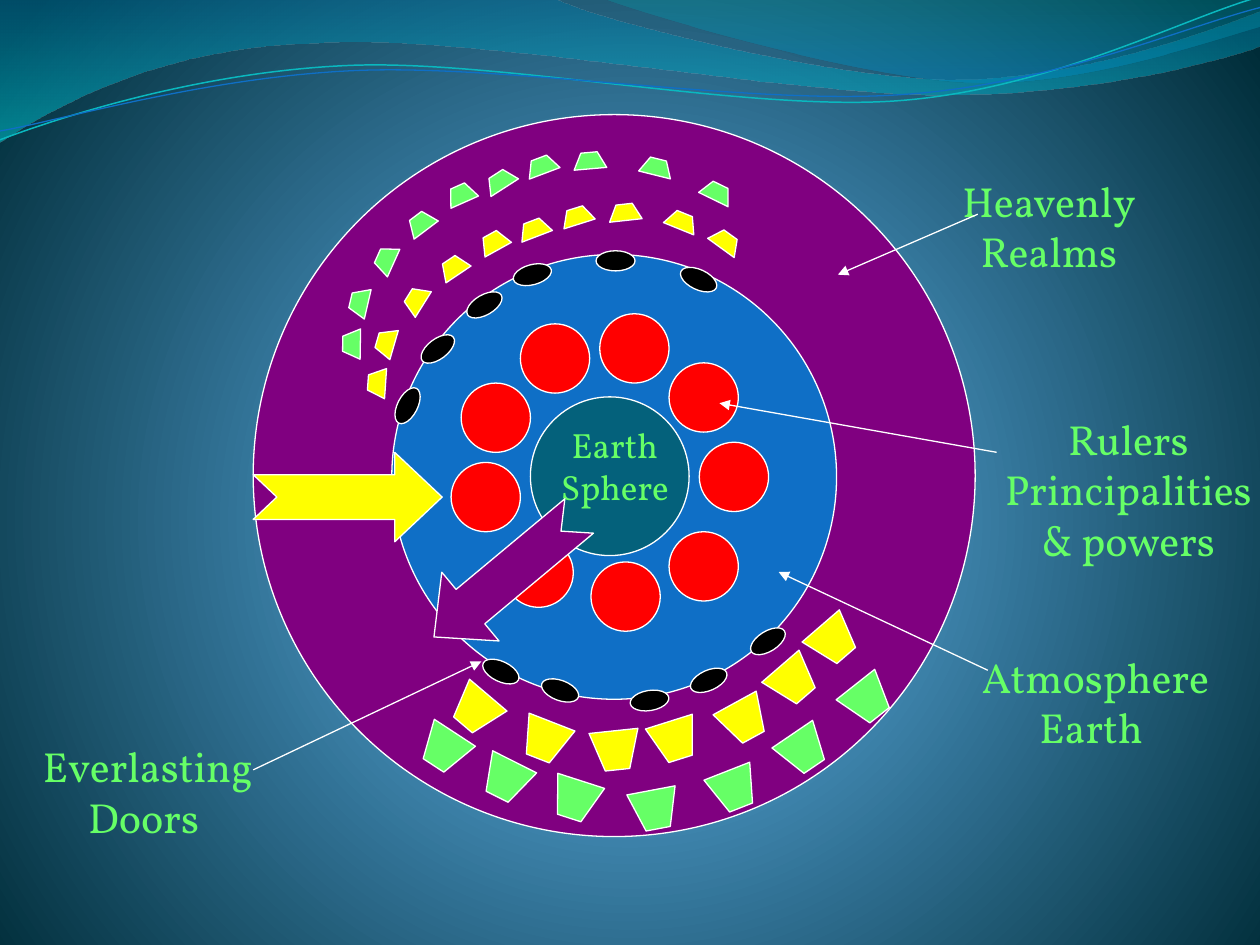
import lxml.etree
import pptx
import pptx.dml.color
import pptx.enum.shapes
import pptx.enum.text
import pptx.oxml
import pptx.oxml.ns
import pptx.util

PX = 9144  # EMU per px, 100 px to the inch
RGB = pptx.dml.color.RGBColor
WHITE = RGB(0xFF, 0xFF, 0xFF)
BLACK = RGB(0x00, 0x00, 0x00)
PURPLE = RGB(0x80, 0x00, 0x80)
BLUE = RGB(0x0F, 0x6F, 0xC6)
TEAL = RGB(0x04, 0x61, 0x7B)
RED = RGB(0xFF, 0x00, 0x00)
YELLOW = RGB(0xFF, 0xFF, 0x00)
GREEN = RGB(0x66, 0xFF, 0x66)
CYAN = RGB(0x0A, 0xB8, 0xBF)
WAVE_BLUE = RGB(0x00, 0x74, 0xA1)
WAVE_TEAL = RGB(0x00, 0xC6, 0xCF)
CREST_TEAL = RGB(0x00, 0xA1, 0xA9)
CREST_BLUE = RGB(0x00, 0x8B, 0xBF)
SHAPE = pptx.enum.shapes.MSO_SHAPE
qn = pptx.oxml.ns.qn

presentation = pptx.Presentation()
presentation.slide_width = 1000 * PX
presentation.slide_height = 750 * PX
slide = presentation.slides.add_slide(presentation.slide_layouts[6])
shapes = slide.shapes


def paint(shape, fill, rotation=0):
    shape.shadow.inherit = False
    shape.fill.solid()
    shape.fill.fore_color.rgb = fill
    shape.line.color.rgb = WHITE
    shape.line.width = pptx.util.Pt(0.75)
    shape.rotation = rotation


def add_preset(preset, left, top, width, height, fill, rotation=0):
    shape = shapes.add_shape(preset, left * PX, top * PX, width * PX, height * PX)
    paint(shape, fill, rotation)
    return shape


# Radial background
stops = "".join(
    f'<a:gs pos="{position}000"><a:srgbClr val="{color}"/></a:gs>'
    for position, color in [(0, "4AA0D6"), (25, "4C98C7"), (100, "002C38")])
background = pptx.oxml.parse_xml(
    f'<p:bg {pptx.oxml.ns.nsdecls("p", "a")}><p:bgPr><a:gradFill rotWithShape="1">'
    f'<a:gsLst>{stops}</a:gsLst><a:path path="circle">'
    '<a:fillToRect l="10000" t="110000" r="10000" b="100000"/></a:path>'
    '</a:gradFill><a:effectLst/></p:bgPr></p:bg>')
slide._element.cSld.insert(0, background)

# Waves: segment kinds (L line, C curve), points, gradient stops or line
waves = [
    ("LCCLCCCL",
     [(0, 0), (440, -1), (476, 17), (664, 63), (758, 63), (853, 63), (958, 26),
      (1000, 9), (1001, 36), (983, 44), (870, 76), (746, 75), (622, 75),
      (382, 28), (257, 34), (129, 36), (46, 83), (-1, 113), (0, 0)],
     [(0, WAVE_BLUE, 45), (1, WAVE_TEAL, 55)], None),
    ("CCLL",
     [(479, -1), (509, 11), (682, 62), (769, 65), (856, 69), (961, 32),
      (1000, 21), (1000, 0), (479, -1)],
     [(0, CREST_TEAL, 30), (0.8, CREST_BLUE, 45)], None),
    ("CCC",
     [(0, 111), (48, 93), (158, 57), (277, 52), (395, 47), (593, 89),
      (713, 80), (833, 71), (938, 15), (998, -2)],
     None, (CYAN, 0.85)),
    ("CCC",
     [(0, 104), (47, 96), (164, 61), (283, 56), (403, 51), (597, 84),
      (717, 75), (836, 67), (941, 21), (1000, 6)],
     None, (BLUE, 0.75)),
]
for kinds, points, gradient, stroke in waves:
    builder = shapes.build_freeform(*points[0], scale=PX)
    builder.add_line_segments(points[1:], close=gradient is not None)
    wave = builder.convert_to_shape()
    wave.shadow.inherit = False
    segments = iter(list(wave._element.iter(qn("a:lnTo"))))
    for kind in kinds:
        if kind == "L":
            next(segments)
            continue
        corners = [next(segments) for _ in range(3)]
        curve = lxml.etree.Element(qn("a:cubicBezTo"))
        corners[0].addprevious(curve)
        for corner in corners:
            curve.append(corner[0])
            corner.getparent().remove(corner)
    if gradient:
        wave.line.fill.background()
        wave.fill.gradient()
        wave.fill.gradient_angle = 270
        for stop, (position, color, _) in zip(wave.fill.gradient_stops, gradient):
            stop.position = position
            stop.color.rgb = color
        colors = wave._element.spPr.iter(qn("a:srgbClr"))
        for color, (_, _, opacity) in zip(list(colors), gradient):
            lxml.etree.SubElement(color, qn("a:alpha"), val=f"{opacity}000")
    else:
        wave.fill.background()
        wave.line.color.rgb = stroke[0]
        wave.line.width = pptx.util.Pt(stroke[1])

# Concentric realms
for left, top, size, fill in [(201, 91, 573, PURPLE), (311, 202, 353, BLUE),
                              (421, 315, 126, TEAL)]:
    add_preset(SHAPE.OVAL, left, top, size, size, fill)

# Rulers around the earth
for left, top in [(476, 249), (413, 257), (366, 304), (358, 367), (400, 427),
                  (469, 446), (531, 288), (555, 351), (531, 422)]:
    add_preset(SHAPE.OVAL, left, top, 55, 55, RED)

# Labels
frame_format = {"margin_left": 0, "margin_top": 0, "margin_right": 0,
                "margin_bottom": 0, "word_wrap": True}
labels = [
    (" Atmosphere Earth", 752, 517, 228, 81, 24),
    ("Rulers Principalities & powers", 791, 328, 209, 121, 24),
    ("Earth\vSphere", 429, 336, 118, 67, 20),
    ("Heavenly\vRealms", 736, 139, 193, 81, 24),
    (" Everlasting Doors", 0, 588, 228, 81, 24),
]
for text, left, top, width, height, size in labels:
    box = shapes.add_textbox(left * PX, top * PX, width * PX, height * PX)
    for name, value in frame_format.items():
        setattr(box.text_frame, name, value)
    paragraph = box.text_frame.paragraphs[0]
    paragraph.text = text
    paragraph.alignment = pptx.enum.text.PP_ALIGN.CENTER
    for run in paragraph.runs:
        for name, value in {"name": "Vollkorn", "size": pptx.util.Pt(size)}.items():
            setattr(run.font, name, value)
        run.font.color.rgb = GREEN

# Block arrows
for left, top, fill, rotation in [(201, 359, YELLOW, 0), (327, 422, PURPLE, 140.2)]:
    arrow = add_preset(SHAPE.NOTCHED_RIGHT_ARROW, left, top, 150, 71, fill, rotation)
    arrow.adjustments[0] = 0.5
    arrow.adjustments[1] = 0.53

# Pointers from the labels
for ends in [(784, 532, 618, 454), (776, 170, 665, 218),
             (791, 359, 571, 320), (201, 611, 382, 525)]:
    pointer = shapes.add_connector(pptx.enum.shapes.MSO_CONNECTOR.STRAIGHT,
                                   *[value * PX for value in ends])
    pointer.line.color.rgb = WHITE
    pointer.line.width = pptx.util.Pt(0.75)
    lxml.etree.SubElement(pointer.line._get_or_add_ln(), qn("a:tailEnd"), type="triangle")
    lxml.etree.SubElement(pointer._element.spPr, qn("a:effectLst"))

# Trapezoid rows: fill, width, height, then left, top, rotation of each
trapezoid_rows = [
    (YELLOW, 26, 13, [(563, 185, 216), (528, 169, 202), (483, 162, 173.7),
                      (445, 165, 162.5), (411, 175, 159)]),
    (YELLOW, 24, 14, [(380, 185, 151), (348, 205, 146.1), (318, 231, 122),
                      (294, 265, 106.1), (287, 297, 93.9)]),
    (GREEN, 26, 13, [(556, 146, 206), (508, 126, 194), (455, 121, 175),
                     (417, 125, 159.4), (384, 137, 147.2)]),
    (GREEN, 24, 14, [(354, 147, 156), (322, 170, 143), (294, 199, 114.2),
                     (273, 233, 103), (267, 266, 90.9)]),
    (YELLOW, 39, 31, [(358, 548, 40.3), (413, 572, 21.3), (516, 572, 342.5),
                      (571, 556, 331.3), (610, 525, 319.2), (469, 580, 354),
                      (642, 493, 319.2)]),
    (GREEN, 39, 31, [(333, 579, 33.2), (437, 619, 17.9), (563, 611, 338.6),
                     (618, 580, 325.8), (669, 540, 321.7), (500, 627, 349.3),
                     (382, 603, 26.7)]),
]
for fill, width, height, places in trapezoid_rows:
    for left, top, rotation in places:
        builder = shapes.build_freeform(left * PX, top * PX)
        builder.add_line_segments([((left + width * across) * PX, (top + height * down) * PX)
                                   for across, down in [(0.25, 1), (0.75, 1), (1, 0)]])
        paint(builder.convert_to_shape(), fill, rotation)

# Everlasting doors
for left, top, rotation in [
        (382, 525, 25.6), (429, 540, 20.5), (500, 548, 350.9), (547, 532, 335.9),
        (594, 501, 327.9), (539, 214, 25), (473, 199, 180), (407, 210, 345),
        (369, 234, 330), (332, 269, 323), (308, 314, 297)]:
    add_preset(SHAPE.OVAL, left, top, 31, 16, BLACK, rotation)

presentation.save("out.pptx")
